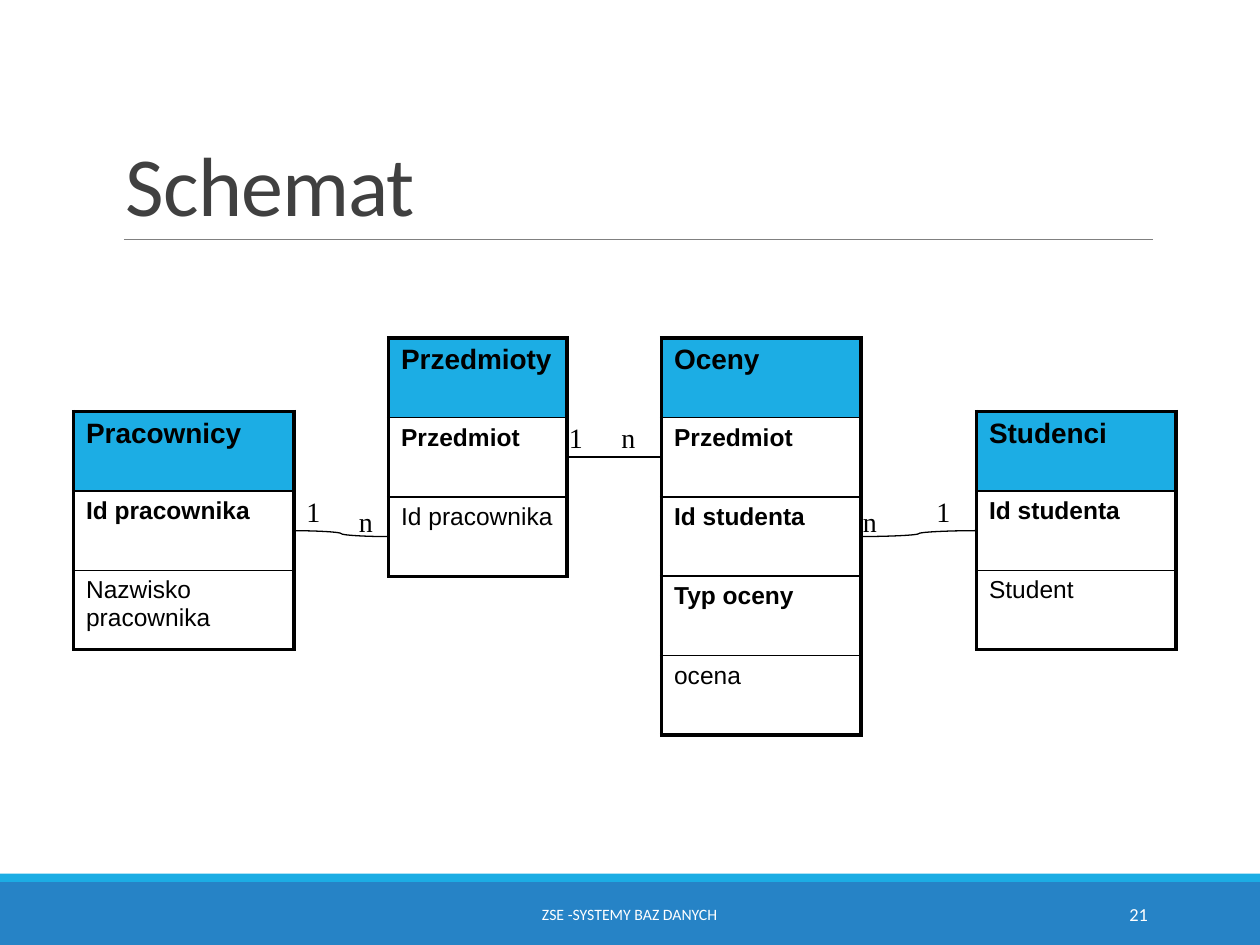
from dataclasses import dataclass

from lxml.etree import SubElement
from pptx import Presentation
from pptx.dml.color import RGBColor
from pptx.enum.shapes import MSO_CONNECTOR as Conn, MSO_SHAPE as Shape
from pptx.enum.text import MSO_ANCHOR as Anchor, PP_ALIGN as Align
from pptx.oxml.ns import qn
from pptx.util import Inches, Pt

UNIT = 10 / 120
ROW = 7.56
BLUE, DEEP, BLACK, WHITE = "1CADE4", "2683C6", "000000", "FFFFFF"


@dataclass
class Entity:
    """A database table: place in grid units, name, keys and plain fields."""
    left: float
    top: float
    width: float
    name: str
    keys: list[str]
    fields: list[str]

    def mid(self, row: int) -> float:
        """Return the middle height of a row."""
        return self.top + (row + 0.5) * ROW


@dataclass
class Link:
    """A relation from the right side of one entity to the left of another."""
    start: Entity
    row: int
    end: Entity
    to: int
    kind: Conn


@dataclass
class Label:
    """One line of text in a box, placed in grid units."""
    text: str
    left: float
    top: float
    width: float = 3.7
    height: float = 4.4
    size: float = 16
    font: str = "Times New Roman"
    color: str = BLACK
    align: Align = Align.LEFT
    anchor: Anchor = Anchor.TOP
    wrap: bool = False


def grid(n: float) -> int:
    """Turn grid units into a length."""
    return Inches(n * UNIT)


def rgb(code: str) -> RGBColor:
    """Turn a hex string into a colour."""
    return RGBColor.from_string(code)


def style(par, size: float, font: str, color: str, bold: bool = False) -> None:
    """Format every run of a paragraph."""
    for run in par.runs:
        run.font.size, run.font.name, run.font.bold = Pt(size), font, bold
        run.font.color.rgb = rgb(color)


def bar(slide, top: float, height: float, color: str) -> None:
    """Draw a band across the slide."""
    box = slide.shapes.add_shape(Shape.RECTANGLE, 0, grid(top), grid(120), grid(height))
    box.shadow.inherit = False
    box.fill.solid()
    box.fill.fore_color.rgb = rgb(color)
    box.line.fill.background()


def line(slide, kind: Conn, x1: float, y1: float, x2: float, y2: float,
         color: str = BLACK, width: float = 0.75) -> None:
    """Draw a connector without a shadow."""
    wire = slide.shapes.add_connector(kind, grid(x1), grid(y1), grid(x2), grid(y2))
    wire.line.color.rgb = rgb(color)
    wire.line.width = Pt(width)
    SubElement(wire._element.spPr, qn("a:effectLst"))


def write(slide, label: Label):
    """Add a text box and return its paragraph."""
    box = slide.shapes.add_textbox(grid(label.left), grid(label.top),
                                   grid(label.width), grid(label.height))
    frame = box.text_frame
    frame.text = label.text
    frame.word_wrap = label.wrap
    frame.vertical_anchor = label.anchor
    par = frame.paragraphs[0]
    par.alignment = label.align
    style(par, label.size, label.font, label.color)
    return par


def edge(cell, first: bool, last: bool) -> None:
    """Give a cell thick outer and thin inner borders."""
    props = cell._tc.get_or_add_tcPr()
    sides = {"L": True, "R": True, "T": first, "B": last}
    for side, thick in sides.items():
        rim = SubElement(props, qn(f"a:ln{side}"), w=str(Pt(2.25 if thick else 1)))
        SubElement(SubElement(rim, qn("a:solidFill")), qn("a:srgbClr"), val=BLACK)


def draw(slide, item: Entity) -> None:
    """Draw an entity as a one-column table."""
    names = [item.name, *item.keys, *item.fields]
    count = len(names)
    table = slide.shapes.add_table(count, 1, grid(item.left), grid(item.top),
                                   grid(item.width), grid(count * ROW)).table
    table.first_row = table.horz_banding = False
    for i, name in enumerate(names):
        table.rows[i].height = grid(ROW)
        cell = table.cell(i, 0)
        cell.text = name
        style(cell.text_frame.paragraphs[0], 14 if i else 16, "Arial", BLACK,
              i <= len(item.keys))
        edge(cell, i == 0, i == count - 1)
        if i:
            cell.fill.background()
        else:
            cell.fill.solid()
            cell.fill.fore_color.rgb = rgb(BLUE)


def main() -> None:
    """Build the slide."""
    deck = Presentation()
    deck.slide_width, deck.slide_height = Inches(10), Inches(7.5)
    slide = deck.slides.add_slide(deck.slide_layouts[6])

    bar(slide, 84, 6, DEEP)
    bar(slide, 83.2, 0.8, BLUE)
    line(slide, Conn.STRAIGHT, 11.8, 22.8, 109.8, 22.8, "808080", 0.5)
    title = write(slide, Label("Schemat", 10.8, 3.75, 99, 19.05, 48, "Calibri",
                               "404040", anchor=Anchor.BOTTOM, wrap=True))
    title.line_spacing = 0.85
    title.runs[0].font._element.set("spc", "-50")

    staff = Entity(7, 39.2, 21, "Pracownicy", ["Id pracownika"], ["Nazwisko pracownika"])
    marks = Entity(63, 32.2, 19, "Oceny", ["Przedmiot", "Id studenta", "Typ oceny"],
                   ["ocena"])
    pupils = Entity(93, 39.2, 19, "Studenci", ["Id studenta"], ["Student"])
    topics = Entity(37, 32.2, 17, "Przedmioty", ["Przedmiot"], ["Id pracownika"])
    for item in (staff, marks, pupils, topics):
        draw(slide, item)

    for link in (Link(topics, 1, marks, 1, Conn.STRAIGHT),
                 Link(staff, 1, topics, 2, Conn.CURVE),
                 Link(marks, 2, pupils, 1, Conn.CURVE)):
        line(slide, link.kind, link.start.left + link.start.width,
             link.start.mid(link.row), link.end.left, link.end.mid(link.to))

    for text, left, top in (("1", 53, 39.5), ("n", 33, 47.5), ("1", 28, 46.5),
                            ("n", 58, 39.5), ("1", 88, 46.5), ("n", 81, 47.5)):
        write(slide, Label(text, left, top))

    write(slide, Label("21", 97.5, 84.7, 13, 4.8, 10.5, "Calibri", WHITE,
                       Align.RIGHT, Anchor.MIDDLE, True))
    write(slide, Label("ZSE -SYSTEMY BAZ DANYCH", 36.2, 84.7, 47.5, 4.8, 9, "Calibri",
                       WHITE, Align.CENTER, Anchor.MIDDLE, True))
    deck.save("out.pptx")


if __name__ == "__main__":
    main()
